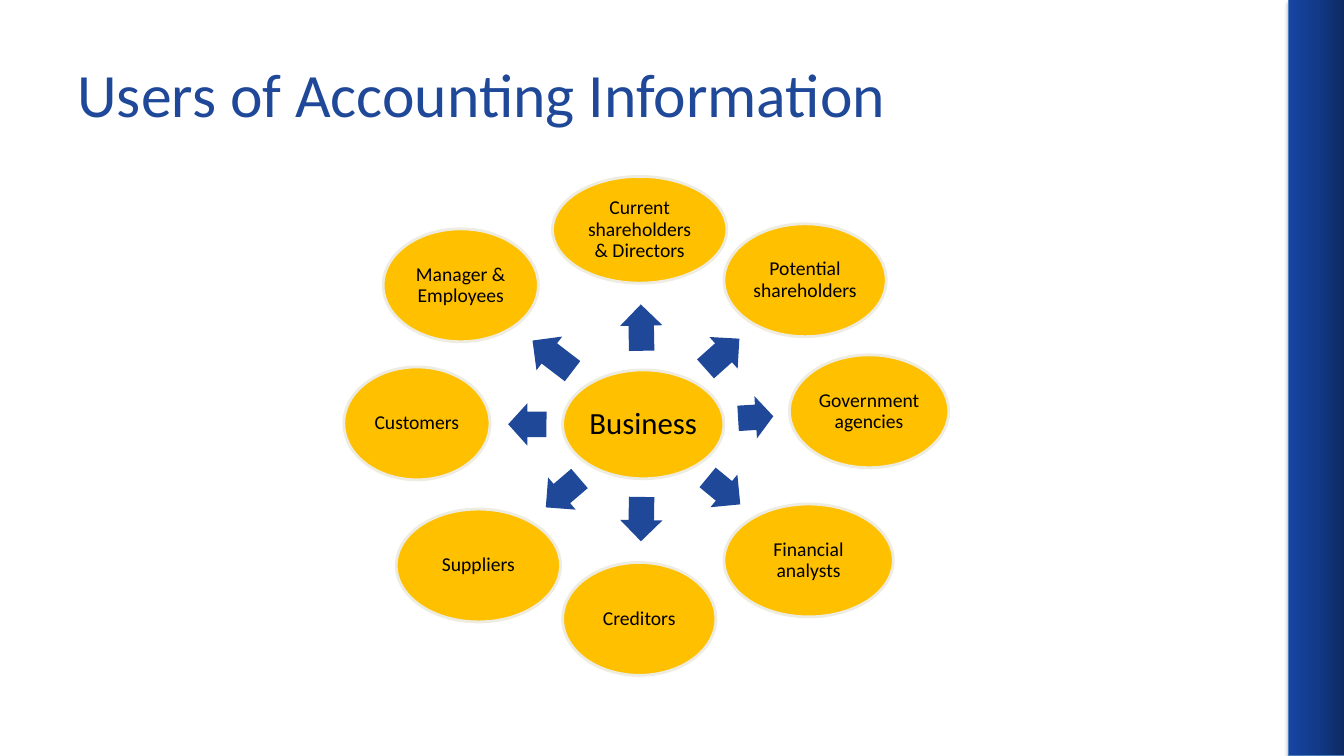
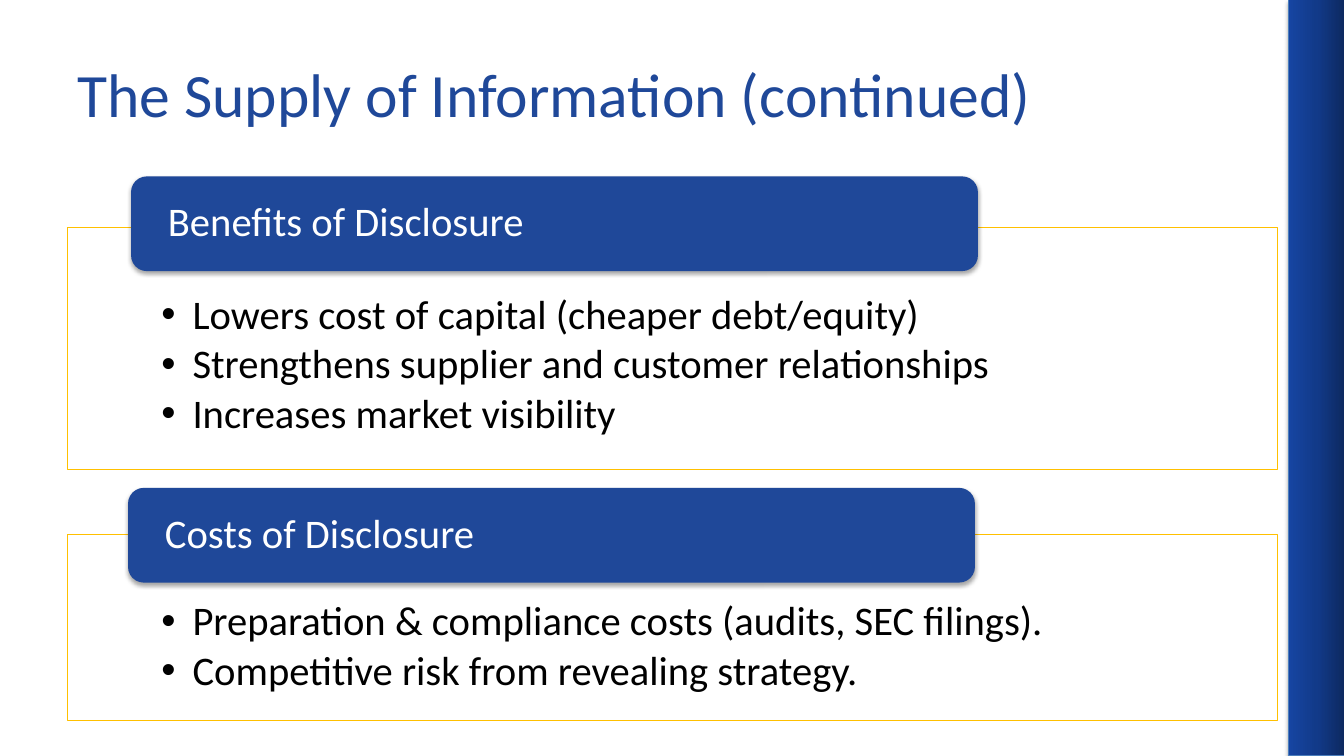
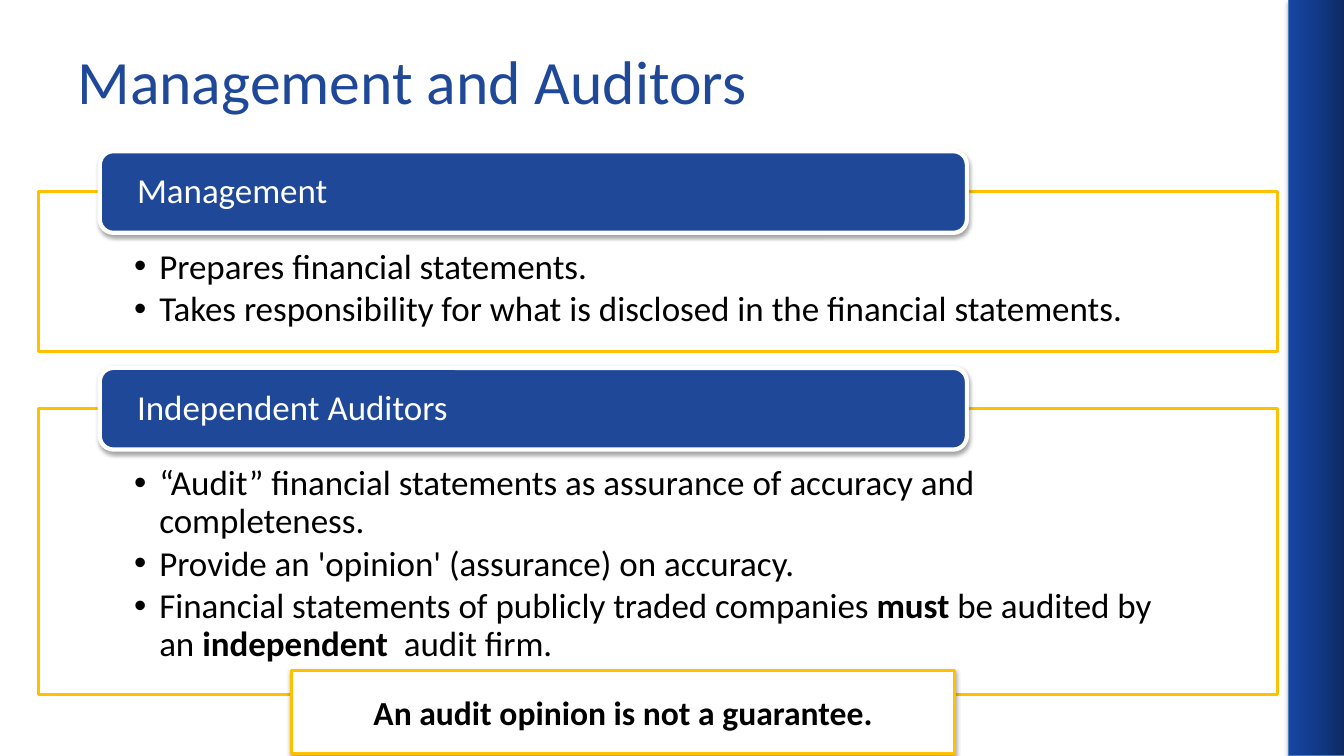
from copy import deepcopy

from lxml.etree import SubElement
from pptx import Presentation
from pptx.dml.color import RGBColor
from pptx.enum.shapes import MSO_SHAPE as Preset
from pptx.enum.text import MSO_ANCHOR as Anchor, PP_ALIGN as Align
from pptx.oxml.ns import qn
from pptx.util import Inches, Pt

FONT = "Calibri"
BLUE = RGBColor(0x1F, 0x48, 0x99)
GOLD = RGBColor(0xFF, 0xC0, 0x00)
CREAM = RGBColor(0xEE, 0xEC, 0xE1)
WHITE = RGBColor(0xFF, 0xFF, 0xFF)
BLACK = RGBColor(0x00, 0x00, 0x00)
BAND_EDGE = RGBColor(0x4B, 0x7E, 0xBC)
BAND_STOPS = [
    (0, RGBColor(0x0D, 0x29, 0x60)),
    (0.5, RGBColor(0x12, 0x3A, 0x89)),
    (1, RGBColor(0x16, 0x45, 0xA2)),
]


def draw(page, preset, box, fill=None, line=None, width=0, shadow=False):
    """Add a preset shape; box is left, top, width, height in inches."""
    shape = page.shapes.add_shape(preset, *map(Inches, box))
    shape.shadow.inherit = False
    if fill is not None:
        shape.fill.solid()
        shape.fill.fore_color.rgb = fill
    if line is None:
        shape.line.fill.background()
    else:
        shape.line.color.rgb = line
        shape.line.width = Pt(width)
    if shadow:
        effects = shape._element.spPr.find(qn("a:effectLst"))
        outer = SubElement(effects, qn("a:outerShdw"), blurRad=str(Pt(3.1)),
                           dist=str(Pt(1.8)), dir="5400000", rotWithShape="0")
        color = SubElement(outer, qn("a:srgbClr"), val="000000")
        SubElement(color, qn("a:alpha"), val="35000")
    return shape


def write(shape, lines, size, color, margins, align=Align.LEFT,
          anchor=Anchor.MIDDLE, spacing=0.9, indent=0, bold=None, wrap=True):
    """Fill a shape with paragraphs; *stars* mark bold words, indent adds bullets."""
    frame = shape.text_frame
    frame.word_wrap = wrap
    frame.vertical_anchor = anchor
    (frame.margin_left, frame.margin_top,
     frame.margin_right, frame.margin_bottom) = map(Inches, margins)
    for index, line in enumerate(lines):
        para = frame.paragraphs[0] if index == 0 else frame.add_paragraph()
        para.alignment = align
        para.line_spacing = spacing
        if indent:
            para.space_after = Pt(0.135 * size)
            props = para._p.get_or_add_pPr()
            props.set("marL", str(Inches(indent)))
            props.set("indent", str(-Inches(indent)))
            SubElement(props, qn("a:buFont"), typeface="Arial")
            SubElement(props, qn("a:buChar"), char="•")
        para.font.name = FONT
        para.font.size = Pt(size)
        para.font.color.rgb = color
        para.font.bold = bold
        for part, text in enumerate(line.split("*")):
            span = para.add_run()
            span.text = text
            if part % 2:
                span.font.bold = True


deck = Presentation()
deck.slide_width, deck.slide_height = Inches(13.33), Inches(7.5)

# Shared side band and title
pages = []
for title, top in [("Users of Accounting Information", 0.3),
                   ("The Supply of Information (continued)", 0.3),
                   ("Management and Auditors", 0.17)]:
    page = deck.slides.add_slide(deck.slide_layouts[6])
    pages.append(page)
    band = draw(page, Preset.RECTANGLE, (12.78, 0, 0.56, 7.5),
                line=BAND_EDGE, width=0.75, shadow=True)
    band.fill.gradient()
    band.fill.gradient_angle = 180
    first_stop = band._element.spPr.find(qn("a:gradFill")).find(qn("a:gsLst"))[0]
    first_stop.addnext(deepcopy(first_stop))
    for stop, (position, color) in zip(band.fill.gradient_stops, BAND_STOPS):
        stop.position = position
        stop.color.rgb = color
    heading = page.shapes.add_textbox(Inches(0.67), Inches(top), Inches(12), Inches(1.25))
    write(heading, [title], 44, BLUE, (0.1, 0.05, 0.1, 0.05), spacing=1)

users_page, supply_page, auditors_page = pages

# Users around the business: label, oval, arrow (left, top, width), arrow rotation
USERS = [
    ("Current shareholders & Directors", (5.48, 1.75, 1.73, 1.06), (6.13, 3.04, 0.46), 268.9),
    ("Potential shareholders", (7.18, 2.22, 1.61, 1.12), (6.94, 3.3, 0.45), 318.3),
    ("Government agencies", (7.83, 3.52, 1.58, 1.12), (7.32, 3.93, 0.35), 356.6),
    ("Financial analysts", (7.18, 5, 1.68, 1.12), (6.97, 4.66, 0.42), 39.5),
    ("Creditors", (5.58, 5.58, 1.52, 1.12), (6.14, 4.94, 0.44), 90.9),
    ("Suppliers", (3.93, 5.05, 1.63, 1.12), (5.36, 4.68, 0.44), 139.4),
    ("Customers", (3.41, 3.64, 1.45, 1.12), (5.04, 4, 0.38), 180.2),
    ("Manager & Employees", (3.8, 2.27, 1.54, 1.12), (5.23, 3.32, 0.5), 217.4),
]
business = draw(users_page, Preset.OVAL, (5.58, 3.67, 1.6, 1.08), GOLD, CREAM, 2)
write(business, ["Business"], 22, BLACK, [0.03] * 4, Align.CENTER)
for label, oval_box, arrow_box, rotation in USERS:
    arrow = draw(users_page, Preset.RIGHT_ARROW, (*arrow_box, 0.42), BLUE)
    arrow.adjustments[0], arrow.adjustments[1] = 0.6, 0.5
    arrow.rotation = rotation
    oval = draw(users_page, Preset.OVAL, oval_box, GOLD, CREAM, 2)
    write(oval, [label], 14, BLACK, [0.02] * 4, Align.CENTER)

# Framed bullet panels, each with a header tab on its top edge
SUPPLY_STYLE = dict(size=29, indent=0.31, margins=(0.93, 0.66, 0.93, 0.23),
                    edge=0.75, tab_edge=None, tab_margin=0.32)
AUDIT_STYLE = dict(size=25, indent=0.25, margins=(0.95, 0.57, 0.95, 0.19),
                   edge=2, tab_edge=WHITE, tab_margin=0.33)
PANELS = [
    (supply_page, SUPPLY_STYLE, "Benefits of Disclosure",
     (0.67, 2.26, 12, 2.4), (1.3, 1.75, 8.4, 0.94),
     ["Lowers cost of capital (cheaper debt/equity)",
      "Strengthens supplier and customer relationships",
      "Increases market visibility"]),
    (supply_page, SUPPLY_STYLE, "Costs of Disclosure",
     (0.67, 5.3, 12, 1.85), (1.27, 4.84, 8.4, 0.94),
     ["Preparation & compliance costs (audits, SEC filings).",
      "Competitive risk from revealing strategy."]),
    (auditors_page, AUDIT_STYLE, "Management",
     (0.38, 1.9, 12.29, 1.59), (0.99, 1.5, 8.6, 0.81),
     ["Prepares financial statements.",
      "Takes responsibility for what is disclosed in the financial statements."]),
    (auditors_page, AUDIT_STYLE, "Independent Auditors",
     (0.38, 4.05, 12.29, 2.84), (0.99, 3.65, 8.6, 0.81),
     ["“Audit” financial statements as assurance of accuracy and completeness.",
      "Provide an 'opinion' (assurance) on accuracy.",
      "Financial statements of publicly traded companies *must* be audited by "
      "an *independent*  audit firm."]),
]
for page, style, header, panel_box, tab_box, bullets in PANELS:
    panel = draw(page, Preset.RECTANGLE, panel_box, WHITE, GOLD, style["edge"])
    write(panel, bullets, style["size"], BLACK, style["margins"],
          anchor=Anchor.TOP, indent=style["indent"])
    tab = draw(page, Preset.ROUNDED_RECTANGLE, tab_box, BLUE, style["tab_edge"], 3, shadow=True)
    write(tab, [header], style["size"], WHITE, (style["tab_margin"], 0, style["tab_margin"], 0))

# Closing remark
remark = draw(auditors_page, Preset.RECTANGLE, (2.89, 6.65, 6.58, 0.83),
              WHITE, GOLD, 2.25, shadow=True)
write(remark, ["An audit opinion is not a guarantee."], 24, BLACK,
      (0.1, 0.05, 0.1, 0.05), Align.CENTER, spacing=1, bold=True, wrap=False)

deck.save("out.pptx")
